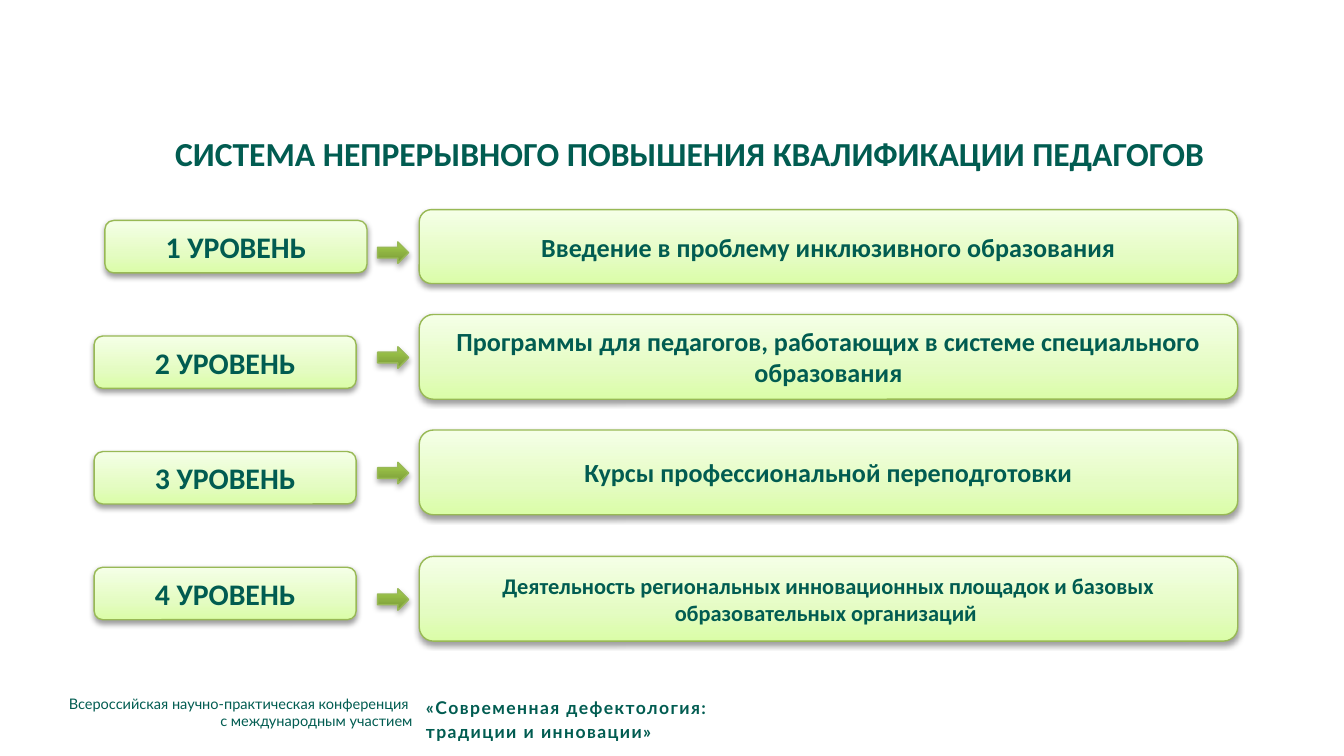
from pptx import Presentation
from pptx.dml.color import RGBColor
from pptx.enum.shapes import MSO_SHAPE as Shape
from pptx.enum.text import MSO_ANCHOR as Anchor, PP_ALIGN as Align
from pptx.oxml import parse_xml
from pptx.oxml.ns import nsdecls, qn
from pptx.util import Pt

GREEN = "015C51"
OUTLINE = "98B955"
PANEL_STOPS = [(0, "DAFDA7"), (35, "E4FCC2"), (100, "F5FFE7")]
ARROW_STOPS = [(0, "779737"), (80, "9BC348"), (100, "9DC746")]

ROW_LEFT, ROW_WIDTH = 50.4, 612.7
DETAIL_LEFT = 174.2  # from the left edge of a row
LABEL_WIDTH, LABEL_HEIGHT = 140.4, 28.1
ARROW_LEFT, ARROW_TOP = 151.9, 17.3
ARROW_WIDTH, ARROW_HEIGHT = 16.6, 11.5

# row top, row height, label offset x, label offset y, text, text size
LEVELS = [
    (112.3, 39.6, 5.8, 5.8, "Введение в проблему инклюзивного образования", 14),
    (168.5, 45.4, 0, 11.5,
     "Программы для педагогов, работающих в системе специального образования", 14),
    (230.4, 45.4, 0, 11.5, "Курсы профессиональной переподготовки", 14),
    (298.1, 45.4, 0, 5.8,
     "Деятельность региональных инновационных площадок и базовых "
     "образовательных организаций ", 12),
]


def color(value):
    return RGBColor.from_string(value)


def points(*values):
    return [Pt(value) for value in values]


def write(shape, text, size, font="Calibri", bold=True, align=Align.CENTER):
    frame = shape.text_frame
    frame.word_wrap = True
    frame.text = text
    for paragraph in frame.paragraphs:
        paragraph.alignment = align
        for run in paragraph.runs:
            run.font.size = Pt(size)
            run.font.name = font
            run.font.bold = bold
            run.font.color.rgb = color(GREEN)
    return frame


def add_glossy_shape(slide, kind, box, stops, shadow_distance, shadow_alpha):
    """Add a shape with a vertical gradient, thin outline and soft shadow."""
    shape = slide.shapes.add_shape(kind, *points(*box))
    shape.fill.gradient()
    shape.fill.gradient_angle = 90
    properties = shape._element.spPr
    stop_list = properties.find(qn("a:gradFill")).find(qn("a:gsLst"))
    for old_stop in list(stop_list):
        stop_list.remove(old_stop)
    for position, value in stops:
        stop_list.append(parse_xml(
            f'<a:gs {nsdecls("a")} pos="{position * 1000}">'
            f'<a:srgbClr val="{value}"/></a:gs>'))
    shape.line.color.rgb = color(OUTLINE)
    shape.line.width = Pt(0.75)
    shape.shadow.inherit = False
    properties.find(qn("a:effectLst")).append(parse_xml(
        f'<a:outerShdw {nsdecls("a")} blurRad="{Pt(3.1)}" '
        f'dist="{Pt(shadow_distance)}" dir="5400000" rotWithShape="0">'
        f'<a:srgbClr val="000000"><a:alpha val="{shadow_alpha * 1000}"/>'
        '</a:srgbClr></a:outerShdw>'))
    return shape


def add_panel(slide, box, text, size):
    panel = add_glossy_shape(slide, Shape.ROUNDED_RECTANGLE, box, PANEL_STOPS, 1.6, 38)
    write(panel, text, size).vertical_anchor = Anchor.MIDDLE


def add_level(slide, box, label, label_offset, text, size):
    left, top, width, height = box
    offset_x, offset_y = label_offset
    add_panel(slide, (left + offset_x, top + offset_y, LABEL_WIDTH, LABEL_HEIGHT),
              label, 16)
    add_panel(slide, (left + DETAIL_LEFT, top, width - DETAIL_LEFT, height), text, size)
    arrow_box = (left + ARROW_LEFT, top + ARROW_TOP, ARROW_WIDTH, ARROW_HEIGHT)
    add_glossy_shape(slide, Shape.RIGHT_ARROW, arrow_box, ARROW_STOPS, 1.8, 35)


def add_title(slide, box):
    title = slide.shapes.add_textbox(*points(*box))
    write(title, "СИСТЕМА НЕПРЕРЫВНОГО ПОВЫШЕНИЯ КВАЛИФИКАЦИИ ПЕДАГОГОВ", 18)


def add_footer(slide, box):
    left, top, width, height = box
    split = 228.2
    name = slide.shapes.add_textbox(*points(left + split, top + 0.7, width - split, height))
    frame = write(name, "«Cовременная дефектология:\nтрадиции и инновации»", 9.4,
                  "Lato", align=Align.LEFT)
    frame.margin_left = frame.margin_right = frame.margin_bottom = 0
    frame.margin_top = Pt(4)
    frame.paragraphs[1].space_before = Pt(1.9)
    for paragraph in frame.paragraphs:
        for run in paragraph.runs:
            run.font._element.set("spc", "80")

    event = slide.shapes.add_textbox(*points(left, top, split, height))
    write(event, "Всероссийская научно-практическая конференция \vс международным участием",
          7.8, "Lato", bold=False, align=Align.RIGHT)


def main():
    presentation = Presentation()
    presentation.slide_width, presentation.slide_height = points(720, 405)
    slide = presentation.slides.add_slide(presentation.slide_layouts[6])
    add_footer(slide, (0, 368.6, 575.3, 26))
    add_title(slide, (44.6, 67.7, 650.2, 38.9))
    for number, (top, height, offset_x, offset_y, text, size) in enumerate(LEVELS, 1):
        add_level(slide, (ROW_LEFT, top, ROW_WIDTH, height), f"{number} УРОВЕНЬ",
                  (offset_x, offset_y), text, size)
    presentation.save("out.pptx")


if __name__ == "__main__":
    main()
